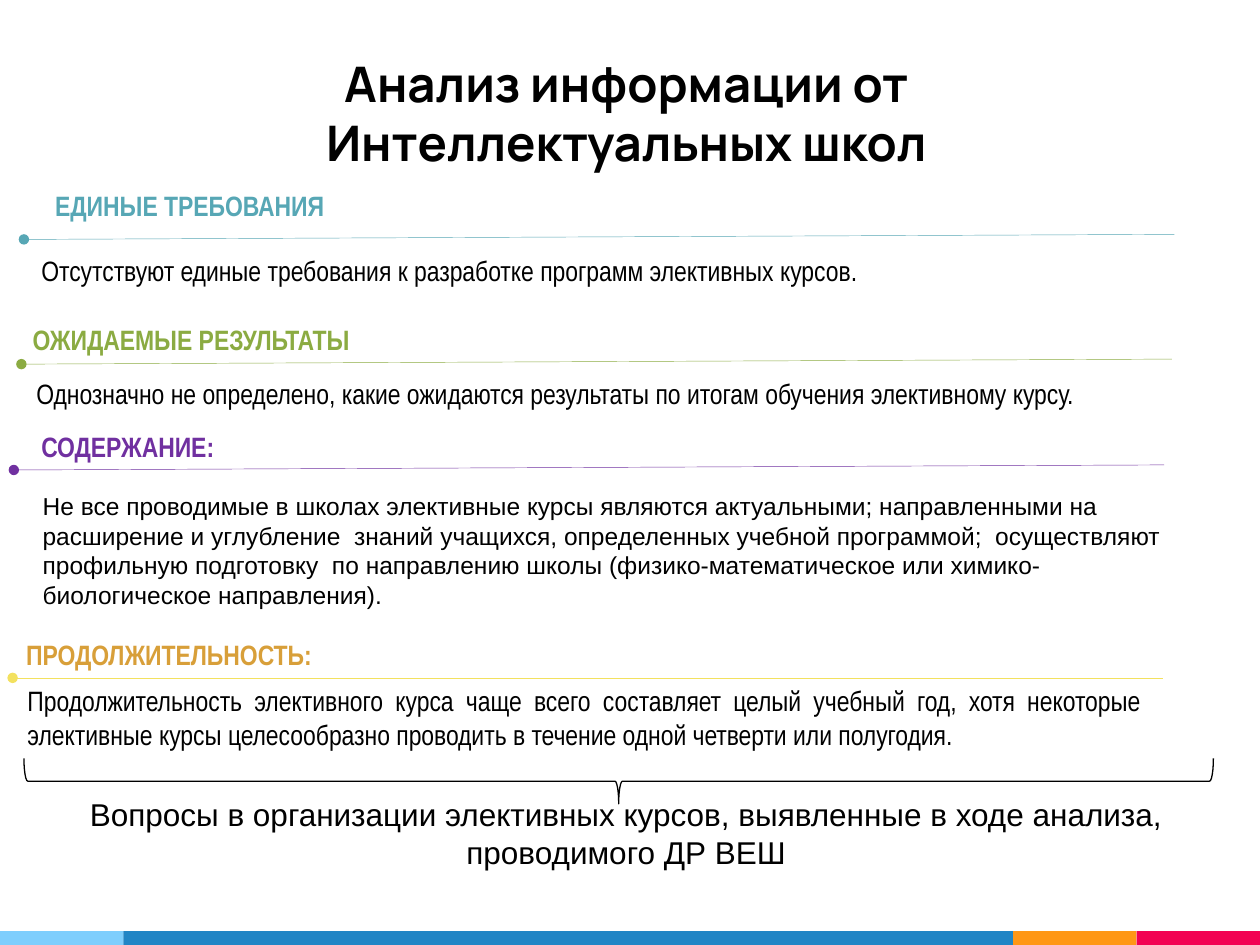
from dataclasses import dataclass

from lxml import etree
from pptx import Presentation
from pptx.dml.color import RGBColor
from pptx.enum.shapes import MSO_CONNECTOR, MSO_SHAPE
from pptx.enum.text import MSO_ANCHOR, PP_ALIGN
from pptx.oxml.ns import qn
from pptx.util import Inches, Pt


@dataclass(frozen=True)
class Theme:
    ink: str = "000000"
    teal: str = "57A7B5"
    green: str = "8BAB42"
    purple: str = "7030A0"
    yellow: str = "F3E15F"
    ochre: str = "D89F39"
    footer: tuple = ("7ECEFD", "2185C5", "FF9715", "F20253")
    title_font: str = "Manrope"
    narrow: str = "Arial Narrow"
    sans: str = "Arial"
    title: int = 28
    summary: int = 18
    section: int = 16
    detail: int = 14


T = Theme()
RULE_WIDTH = 9.13


def rgb(value):
    return RGBColor.from_string(value)


def add_text(s, box, text, font, size, color=T.ink, bold=False,
             align=PP_ALIGN.LEFT):
    tf = s.shapes.add_textbox(*map(Inches, box)).text_frame
    tf.word_wrap = True
    p = tf.paragraphs[0]
    p.text = text
    p.alignment = align
    p.font.name, p.font.size, p.font.bold = font, Pt(size), bold
    p.font.color.rgb = rgb(color)
    return tf


def add_title(s, box, text):
    tf = add_text(s, box, text, T.title_font, T.title, bold=True,
                  align=PP_ALIGN.CENTER)
    tf.vertical_anchor = MSO_ANCHOR.BOTTOM
    tf.margin_top = tf.margin_bottom = Inches(0.1)


def add_rule(s, left, top, rise, color):
    """Thin line that starts with a dot."""
    line = s.shapes.add_connector(
        MSO_CONNECTOR.STRAIGHT, Inches(left), Inches(top),
        Inches(left + RULE_WIDTH), Inches(top - rise))
    line.line.color.rgb = rgb(color)
    line.line.width = Pt(0.25)
    etree.SubElement(line.line._get_or_add_ln(), qn("a:headEnd"), type="oval")
    etree.SubElement(line._element.spPr, qn("a:effectLst"))


def add_section(s, rule, rule_color, heading_box, heading, color,
                body_box, body, font=T.narrow, size=T.section,
                align=PP_ALIGN.JUSTIFY):
    add_rule(s, *rule, rule_color)
    add_text(s, heading_box, heading, T.narrow, T.section, color, bold=True)
    add_text(s, body_box, body, font, size, align=align)


def add_summary(s, box, text):
    """Brace pointing down at the closing statement."""
    top = box[1]
    long, short = 9.44, 0.36
    center_x, center_y = 4.91, top - 0.06
    brace = s.shapes.add_shape(
        MSO_SHAPE.RIGHT_BRACE, Inches(center_x - short / 2),
        Inches(center_y - long / 2), Inches(short), Inches(long))
    brace.rotation = 90
    brace.shadow.inherit = False
    brace.fill.background()
    brace.line.color.rgb = rgb(T.ink)
    brace.line.width = Pt(0.75)
    add_text(s, box, text, T.sans, T.summary, align=PP_ALIGN.CENTER)


def add_footer(s, box):
    left, top, width, height = box
    end = 0.98
    for color, w in zip(T.footer, (end, width - 3 * end, end, end)):
        bar = s.shapes.add_shape(MSO_SHAPE.RECTANGLE, Inches(left),
                                 Inches(top), Inches(w), Inches(height))
        bar.shadow.inherit = False
        bar.fill.solid()
        bar.fill.fore_color.rgb = rgb(color)
        bar.line.fill.background()
        left += w


def main():
    prs = Presentation()
    prs.slide_width, prs.slide_height = Inches(10), Inches(7.5)
    s = prs.slides.add_slide(prs.slide_layouts[6])

    add_footer(s, (0, 7.39, 10, 0.11))
    add_title(s, (0.8, 0.28, 8.34, 1.18),
              "Анализ информации от Интеллектуальных школ")

    # Findings
    add_section(
        s, (0.19, 1.9, 0.04), T.teal,
        (0.34, 1.45, 2.44, 0.37), "ЕДИНЫЕ ТРЕБОВАНИЯ", T.teal,
        (0.23, 1.96, 9.23, 0.37),
        "Отсутствуют единые требования к разработке программ элективных курсов.")
    add_section(
        s, (0.17, 2.89, 0.04), T.green,
        (0.16, 2.51, 8.59, 0.37), "ОЖИДАЕМЫЕ РЕЗУЛЬТАТЫ", T.green,
        (0.14, 2.94, 9.13, 0.37),
        " Однозначно не определено, какие ожидаются результаты по итогам "
        "обучения элективному курсу.")
    add_section(
        s, (0.11, 3.73, 0.04), T.purple,
        (0.23, 3.36, 8.59, 0.37), "СОДЕРЖАНИЕ:", T.purple,
        (0.24, 3.85, 9.2, 1.04),
        "Не все проводимые в школах элективные курсы являются актуальными; "
        "направленными на расширение и углубление  знаний учащихся, "
        "определенных учебной программой;  осуществляют профильную "
        "подготовку  по направлению школы (физико-математическое или "
        "химико-биологическое направления).",
        T.sans, T.detail, PP_ALIGN.LEFT)
    add_section(
        s, (0.1, 5.38, 0), T.yellow,
        (0.11, 5.01, 2.57, 0.37), "ПРОДОЛЖИТЕЛЬНОСТЬ:", T.ochre,
        (0.12, 5.38, 9.04, 0.64),
        "Продолжительность элективного курса чаще всего составляет целый "
        "учебный год, хотя некоторые элективные курсы целесообразно "
        "проводить в течение одной четверти или полугодия.")

    add_summary(s, (0.29, 6.26, 9.36, 0.71),
                "Вопросы в организации элективных курсов, выявленные в ходе "
                "анализа, проводимого ДР ВЕШ")
    prs.save("out.pptx")


if __name__ == "__main__":
    main()
